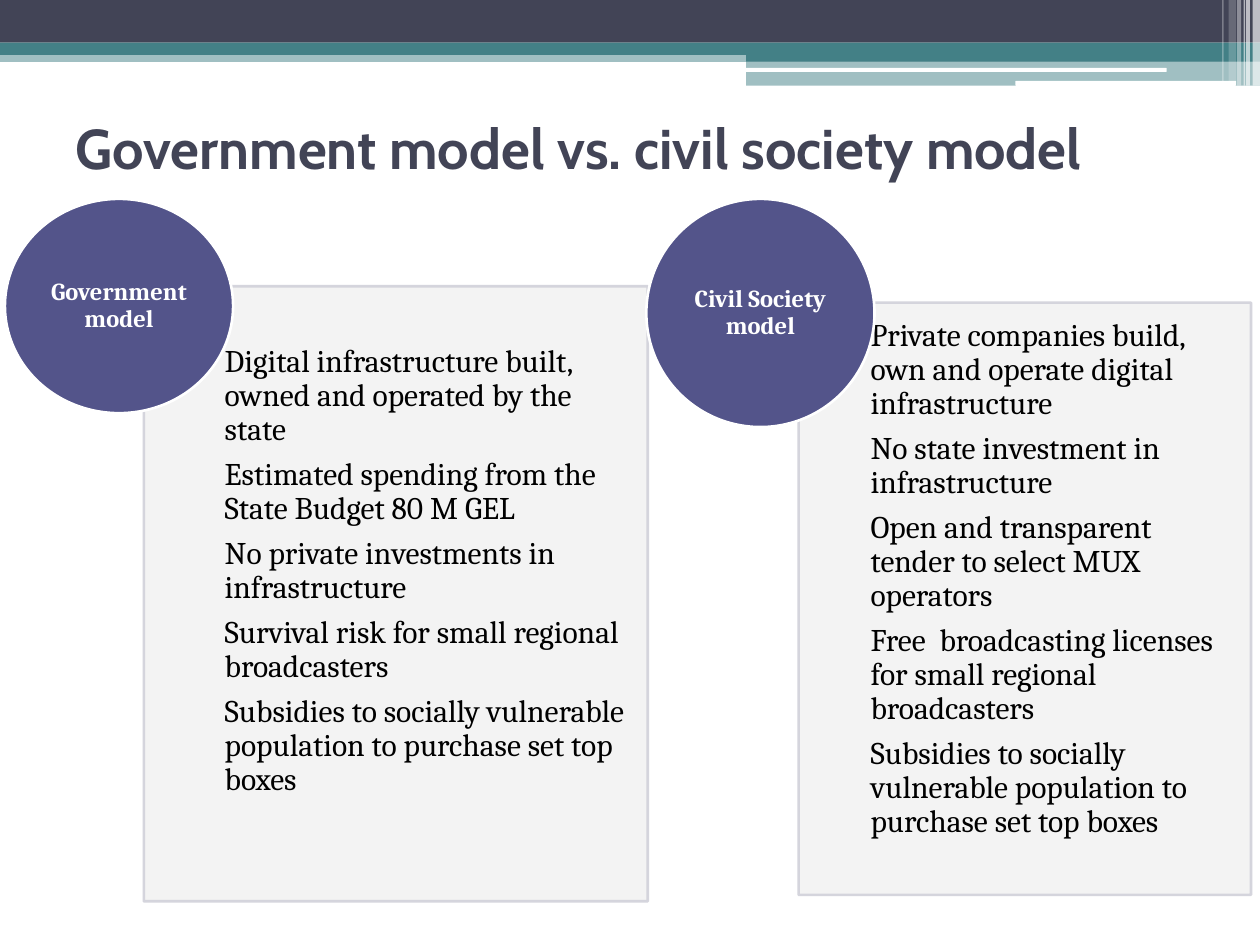
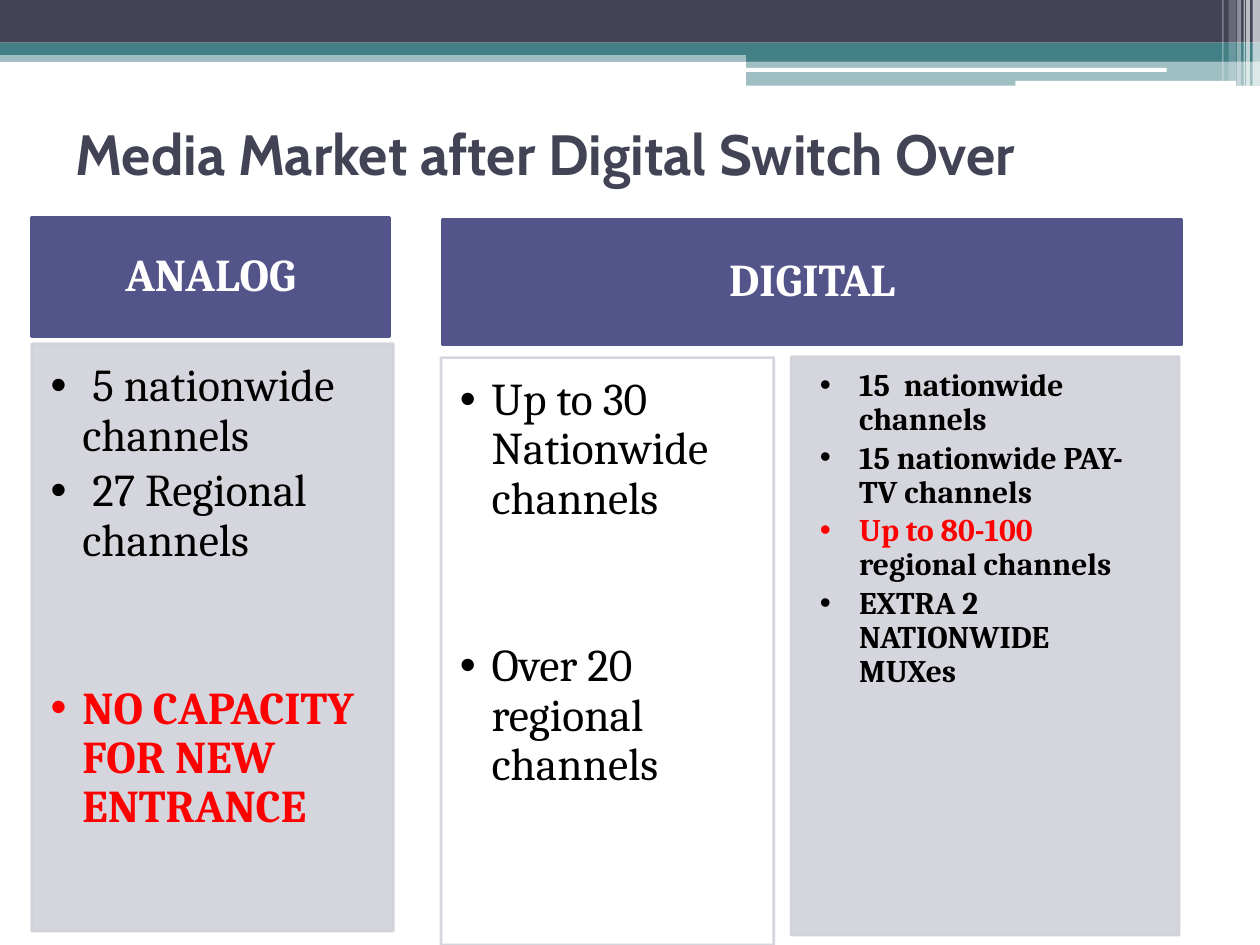
from dataclasses import dataclass
from typing import Any

from lxml import etree
from pptx import Presentation
from pptx.dml.color import RGBColor
from pptx.enum.shapes import MSO_SHAPE
from pptx.enum.text import MSO_ANCHOR, MSO_AUTO_SIZE, PP_ALIGN
from pptx.oxml.ns import qn
from pptx.util import Cm, Pt

RECT, ROUND, OVAL = MSO_SHAPE.RECTANGLE, MSO_SHAPE.ROUNDED_RECTANGLE, MSO_SHAPE.OVAL
TOP, MIDDLE = MSO_ANCHOR.TOP, MSO_ANCHOR.MIDDLE
LEFT, CENTER = PP_ALIGN.LEFT, PP_ALIGN.CENTER
FIXED = MSO_AUTO_SIZE.NONE

HUES = {
    "navy": "424456", "teal": "438086", "violet": "53548A", "white": "FFFFFF",
    "pale": "F2F2F2", "mist": "D1D1DA", "black": "000000", "red": "FF0000",
}
HEAD_FONT, BODY_FONT = "Cabin", "Cambria"
WIDE, HIGH = 25.4, 19.05
GAP = 64  # points left free above a set-apart bullet

Box = tuple[float, float, float, float]


@dataclass
class Band:
    box: Box
    hue: str
    alpha: int = 100
    form: Any = RECT


@dataclass
class Item:
    text: str
    ink: str = "black"
    bold: bool = False
    before: float = 0
    tail: str = ""


@dataclass
class Panel:
    box: Box
    pads: Box
    items: list[Item]
    fill: str = "mist"
    size: float = 18
    after: float = 0.15
    indent: float = 0
    anchor: Any = TOP


@dataclass
class Label:
    text: str
    box: Box
    size: float
    edge: str
    form: Any = RECT
    pads: Box = (0.51, 0.3, 0.51, 0.3)


@dataclass
class Page:
    title: str
    size: float
    box: Box
    panels: list[Panel]
    labels: list[Label]


# Header bands, then the white stripes at the right edge
BANDS = [
    Band((0, 1.02, WIDE, 0.23), "teal", 50),
    Band((0, 0, WIDE, 0.86), "navy"),
    Band((0, 0.86, WIDE, 0.25), "teal"),
    Band((15.04, 0.99, 10.36, 0.25), "teal"),
    Band((15.04, 1.22, 10.36, 0.51), "teal", 50),
    Band((15.01, 1.37, 8.51, 0.08), "white", form=ROUND),
    Band((20.47, 1.63, 4.45, 0.1), "white", form=ROUND),
] + [
    Band((left, 0, width, height), "white", alpha)
    for left, width, height, alpha in (
        (25.25, 0.15, 1.73, 65), (25.12, 0.08, 1.73, 65), (25.07, 0.03, 1.73, 60),
        (24.94, 0.08, 1.73, 40), (24.77, 0.15, 1.63, 20), (24.64, 0.03, 1.63, 30),
    )
]

SUBSIDY = "Subsidies to socially vulnerable population to purchase set top boxes"
LIST_PADS = (0.38, 0.38, 0.51, 0.58)
NO_PADS = (0, 0, 0, 0)


def model(box: Box, pads: Box, texts: list[str]) -> Panel:
    return Panel(box, pads, [Item(text) for text in texts], "pale",
                 after=0.35, anchor=MIDDLE)


PAGES = [
    Page(
        "Government model vs. civil society model", 32, (1.27, 1.7, 22.86, 2.54),
        [
            model((2.9, 5.77, 10.16, 12.4), (1.63, 0.36, 0.36, 1.27), [
                "Digital infrastructure built, owned and operated by the state",
                "Estimated spending from the State Budget 80 M GEL",
                "No private investments in infrastructure",
                "Survival risk for small regional broadcasters",
                SUBSIDY,
            ]),
            model((16.1, 6.1, 9.12, 11.94), (1.45, 0.36, 0.36, 1.14), [
                "Private companies build, own and operate digital infrastructure",
                "No state investment in infrastructure",
                "Open and transparent tender to select MUX operators",
                "Free  broadcasting licenses for small regional broadcasters",
                SUBSIDY,
            ]),
        ],
        [
            Label("Government model", (0.1, 4.01, 4.6, 4.32), 14, "white", OVAL, NO_PADS),
            Label("Civil Society model", (13.03, 4.01, 4.6, 4.6), 14, "white", OVAL, NO_PADS),
        ],
    ),
    Page(
        "Media Market after Digital Switch Over", 32.4, (1.27, 1.91, 22.86, 2.34),
        [
            Panel((0.64, 6.93, 7.29, 11.84), LIST_PADS, [
                Item(" 5 nationwide channels"),
                Item(" 27 Regional channels"),
                Item("NO CAPACITY FOR NEW ENTRANCE", "red", True, GAP),
            ], size=26, indent=0.64),
            Panel((8.89, 7.21, 6.71, 11.84), LIST_PADS, [
                Item("Up to 30 Nationwide channels"),
                Item("Over 20 regional channels", before=GAP),
            ], "white", size=26, indent=0.64),
            Panel((15.95, 7.19, 7.82, 11.66), (0.58, 0.25, 0.97, 0.58), [
                Item("15  nationwide channels", bold=True),
                Item("15 nationwide PAY-TV channels", bold=True),
                Item("Up to 80-100 ", "red", True, tail="regional channels"),
                Item("EXTRA 2 NATIONWIDE MUXes", bold=True),
            ], indent=0.79),
        ],
        [
            Label("ANALOG", (0.64, 4.39, 7.21, 2.39), 26, "violet"),
            Label("DIGITAL", (8.92, 4.42, 14.91, 2.54), 26, "violet"),
        ],
    ),
]


def tint(name: str) -> RGBColor:
    return RGBColor.from_string(HUES[name])


def place(shape: Any, box: Box) -> None:
    shape.left, shape.top, shape.width, shape.height = map(Cm, box)


def paint(shape: Any, fill: str, edge: str = "", alpha: int = 100) -> None:
    """Set fill and line; alpha applies to both."""
    shape.shadow.inherit = False
    shape.fill.solid()
    shape.fill.fore_color.rgb = tint(fill)
    if edge:
        shape.line.color.rgb = tint(edge)
        shape.line.width = Pt(1.5)
    else:
        shape.line.fill.background()
    if alpha < 100:
        for clr in shape.element.spPr.iter(qn("a:srgbClr")):
            etree.SubElement(clr, qn("a:alpha"), val=str(alpha * 1000))


def frame(shape: Any, pads: Box, anchor: Any) -> Any:
    text = shape.text_frame
    text.word_wrap, text.auto_size, text.vertical_anchor = True, FIXED, anchor
    (text.margin_left, text.margin_top,
     text.margin_right, text.margin_bottom) = map(Cm, pads)
    return text


def style(par: Any, face: str, size: float, ink: str, bold: bool) -> None:
    font = par.font
    font.name, font.size, font.bold = face, Pt(size), bold
    font.color.rgb = tint(ink)


def bullet(par: Any, indent: float) -> None:
    props = par._p.get_or_add_pPr()
    props.set("marL", str(Cm(indent)))
    props.set("indent", str(-Cm(indent)))
    if indent:
        etree.SubElement(props, qn("a:buFont"), typeface="Arial")
        etree.SubElement(props, qn("a:buChar"), char="•")
    else:
        etree.SubElement(props, qn("a:buNone"))


def add_band(slide: Any, layout: Any, band: Band, rank: int) -> None:
    """Draw a band and hand it to the layout, behind the placeholders."""
    shape = slide.shapes.add_shape(band.form, *map(Cm, band.box))
    paint(shape, band.hue, alpha=band.alpha)
    layout.shapes.element.insert(rank, shape.element)


def add_title(slide: Any, page: Page) -> None:
    title = slide.shapes.title
    place(title, page.box)
    text = frame(title, (0.25, 0.13, 0.25, 0.13), MIDDLE)
    text.text = page.title
    par = text.paragraphs[0]
    par.alignment = LEFT
    style(par, HEAD_FONT, page.size, "navy", True)


def fill_panel(shape: Any, panel: Panel) -> None:
    place(shape, panel.box)
    paint(shape, panel.fill, "mist", 90)
    text = frame(shape, panel.pads, panel.anchor)
    for rank, item in enumerate(panel.items):
        par = text.add_paragraph() if rank else text.paragraphs[0]
        par.add_run().text = item.text
        par.alignment, par.line_spacing = LEFT, 0.9
        par.space_before = Pt(item.before)
        par.space_after = Pt(panel.size * panel.after)
        bullet(par, panel.indent)
        style(par, BODY_FONT, panel.size, item.ink, item.bold)
        if item.tail:
            run = par.add_run()
            run.text = item.tail
            run.font.color.rgb = tint("black")


def add_label(slide: Any, label: Label) -> None:
    shape = slide.shapes.add_shape(label.form, *map(Cm, label.box))
    paint(shape, "violet", label.edge)
    text = frame(shape, label.pads, MIDDLE)
    text.text = label.text
    par = text.paragraphs[0]
    par.alignment, par.line_spacing = CENTER, 0.9
    style(par, BODY_FONT, label.size, "white", True)
    # The shape's own style colours runs, so the ink is set there too
    par.runs[0].font.color.rgb = tint("white")


def main() -> None:
    prs = Presentation()
    prs.slide_width, prs.slide_height = Cm(WIDE), Cm(HIGH)
    layout = prs.slide_layouts.get_by_name("Comparison")
    slides = [prs.slides.add_slide(layout) for _ in PAGES]

    # Shared header
    for rank, band in enumerate(BANDS, start=2):
        add_band(slides[0], layout, band, rank)

    # Slides
    for slide, page in zip(slides, PAGES):
        add_title(slide, page)
        slots = list(slide.placeholders)[1:]
        for slot, panel in zip(slots, page.panels):
            fill_panel(slot, panel)
        for slot in slots[len(page.panels):]:
            slot.element.getparent().remove(slot.element)
        for label in page.labels:
            add_label(slide, label)

    prs.save("out.pptx")


if __name__ == "__main__":
    main()
